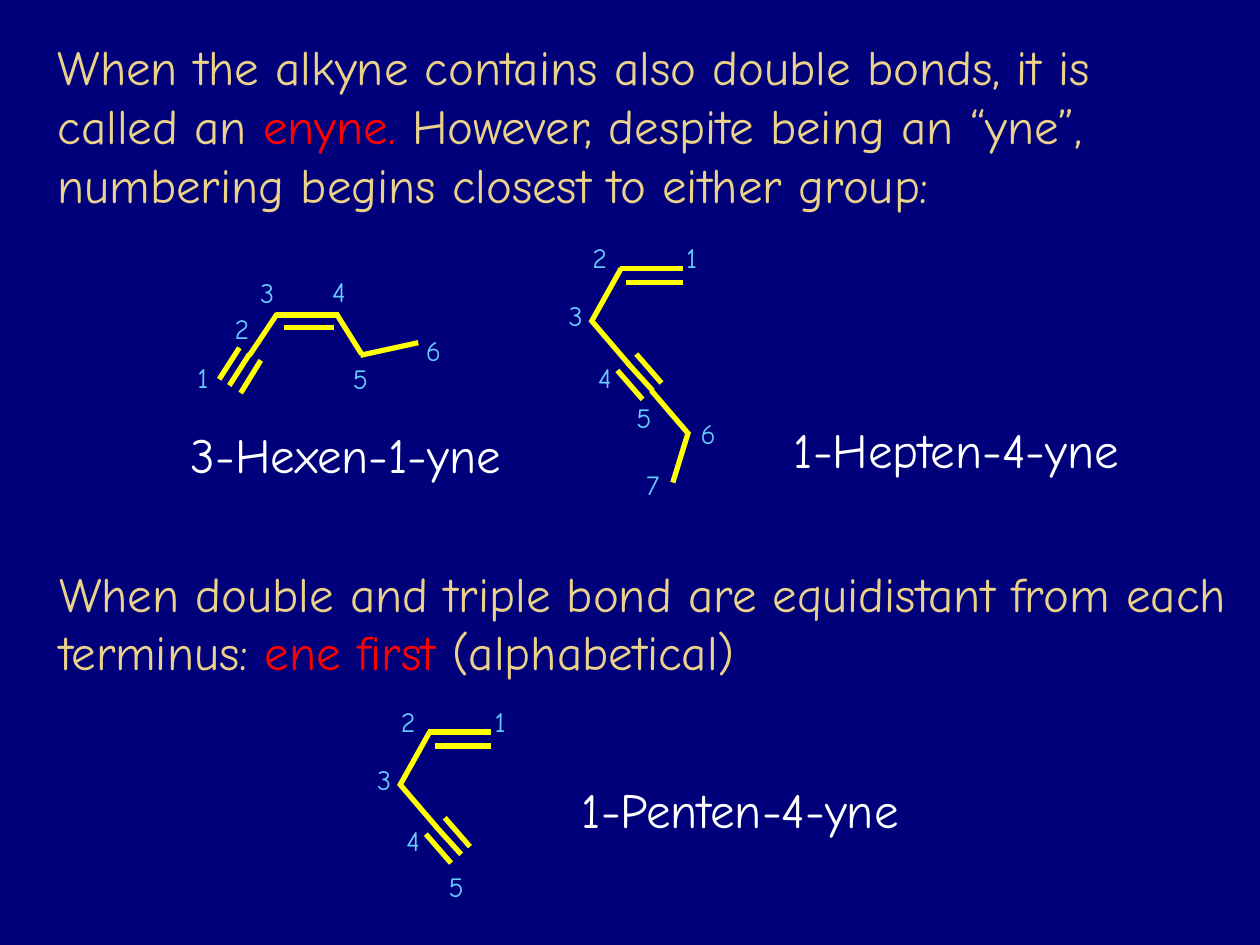
from lxml.etree import SubElement
from pptx import Presentation
from pptx.dml.color import RGBColor
from pptx.enum.shapes import MSO_CONNECTOR
from pptx.enum.text import MSO_AUTO_SIZE, PP_ALIGN
from pptx.oxml.ns import qn
from pptx.util import Inches, Pt

COLORS = {
    "background": "00007A",
    "body": "EBD189",
    "accent": "FF0000",
    "name": "FFFFFF",
    "locant": "66CCFF",
    "bond": "FFFF00",
}
FONT = "Comic Neue"

prs = Presentation()
prs.slide_width, prs.slide_height = Inches(10), Inches(7.5)
s = prs.slides.add_slide(prs.slide_layouts[6])
s.background.fill.solid()
s.background.fill.fore_color.rgb = RGBColor.from_string(COLORS["background"])


def add_text(box, runs, size, align=PP_ALIGN.LEFT, wrap=True):
    """Add a one-paragraph text box; runs are (text, color name) pairs."""
    tf = s.shapes.add_textbox(*map(Inches, box)).text_frame
    tf.word_wrap = wrap
    tf.auto_size = MSO_AUTO_SIZE.SHAPE_TO_FIT_TEXT
    p = tf.paragraphs[0]
    p.alignment = align
    p.font.name, p.font.size = FONT, Pt(size)
    for text, color in runs:
        r = p.add_run()
        r.text = text
        r.font.color.rgb = RGBColor.from_string(COLORS[color])


def add_molecule(bonds, locants, dx=0, dy=0):
    """Draw bonds (x1, y1, x2, y2) and number the carbons from 1, all moved by dx, dy."""
    for x1, y1, x2, y2 in bonds:
        bond = s.shapes.add_connector(
            MSO_CONNECTOR.STRAIGHT,
            Inches(x1 + dx), Inches(y1 + dy), Inches(x2 + dx), Inches(y2 + dy))
        bond.line.color.rgb = RGBColor.from_string(COLORS["bond"])
        bond.line.width = Pt(3)
        SubElement(bond._element.spPr, qn("a:effectLst"))
    for number, (x, y) in enumerate(locants, 1):
        width = 0.3 if number == 1 else 0.34
        add_text((x + dx, y + dy, width, 0.37), [(str(number), "locant")],
                 16, PP_ALIGN.CENTER, wrap=False)


# Naming rules
add_text((0.36, 0.24, 9.06, 1.5), [
    ("When the alkyne contains also double bonds, it is called an ", "body"),
    ("enyne.", "accent"),
    (" However, despite being an “yne”, numbering begins closest to either group:", "body"),
], 28)
add_text((0.37, 4.42, 9.71, 1.03), [
    ("When double and triple bond are equidistant from each terminus: ", "body"),
    ("ene first", "accent"),
    (" (alphabetical)", "body"),
], 28)

# 3-Hexen-1-yne
hexenyne_bonds = [
    (1.91, 3.12, 2.07, 2.86), (1.74, 3.01, 1.9, 2.76), (1.82, 3.06, 1.98, 2.81),
    (1.98, 2.82, 2.2, 2.49),
    (2.19, 2.5, 2.69, 2.5), (2.25, 2.6, 2.65, 2.6),
    (2.67, 2.49, 2.87, 2.81), (2.86, 2.82, 3.32, 2.72),
]
hexenyne_locants = [(1.46, 2.81), (1.75, 2.42), (1.95, 2.14),
                    (2.52, 2.13), (2.69, 2.82), (3.27, 2.6)]
add_molecule(hexenyne_bonds, hexenyne_locants)

# 1-Hepten-4-yne and 1-Penten-4-yne share their first five carbons
shared_bonds = [
    (4.92, 2.13, 5.42, 2.13), (4.97, 2.24, 5.42, 2.24),
    (4.69, 2.56, 4.93, 2.13), (4.69, 2.54, 4.99, 2.89),
    (5.25, 3.04, 5.05, 2.81), (5.1, 3.17, 4.9, 2.94), (5.18, 3.1, 4.98, 2.88),
]
ethyl_bonds = [(5.17, 3.1, 5.47, 3.45), (5.34, 3.83, 5.46, 3.44)]
shared_locants = [(5.34, 1.86), (4.59, 1.86), (4.4, 2.32), (4.63, 2.81)]
add_molecule(shared_bonds + ethyl_bonds,
             shared_locants + [(4.94, 3.13), (5.45, 3.26), (5.01, 3.66)])
add_molecule(shared_bonds, shared_locants + [(4.97, 3.17)], dx=-1.52, dy=3.68)

# Compound names
for name, box in [
    ("3-Hexen-1-yne", (1.28, 3.32, 2.93, 0.57)),
    ("1-Hepten-4-yne", (6.07, 3.28, 3.04, 0.57)),
    ("1-Penten-4-yne", (4.39, 6.14, 2.97, 0.57)),
]:
    add_text(box, [(name, "name")], 28, PP_ALIGN.CENTER)

prs.save("out.pptx")
